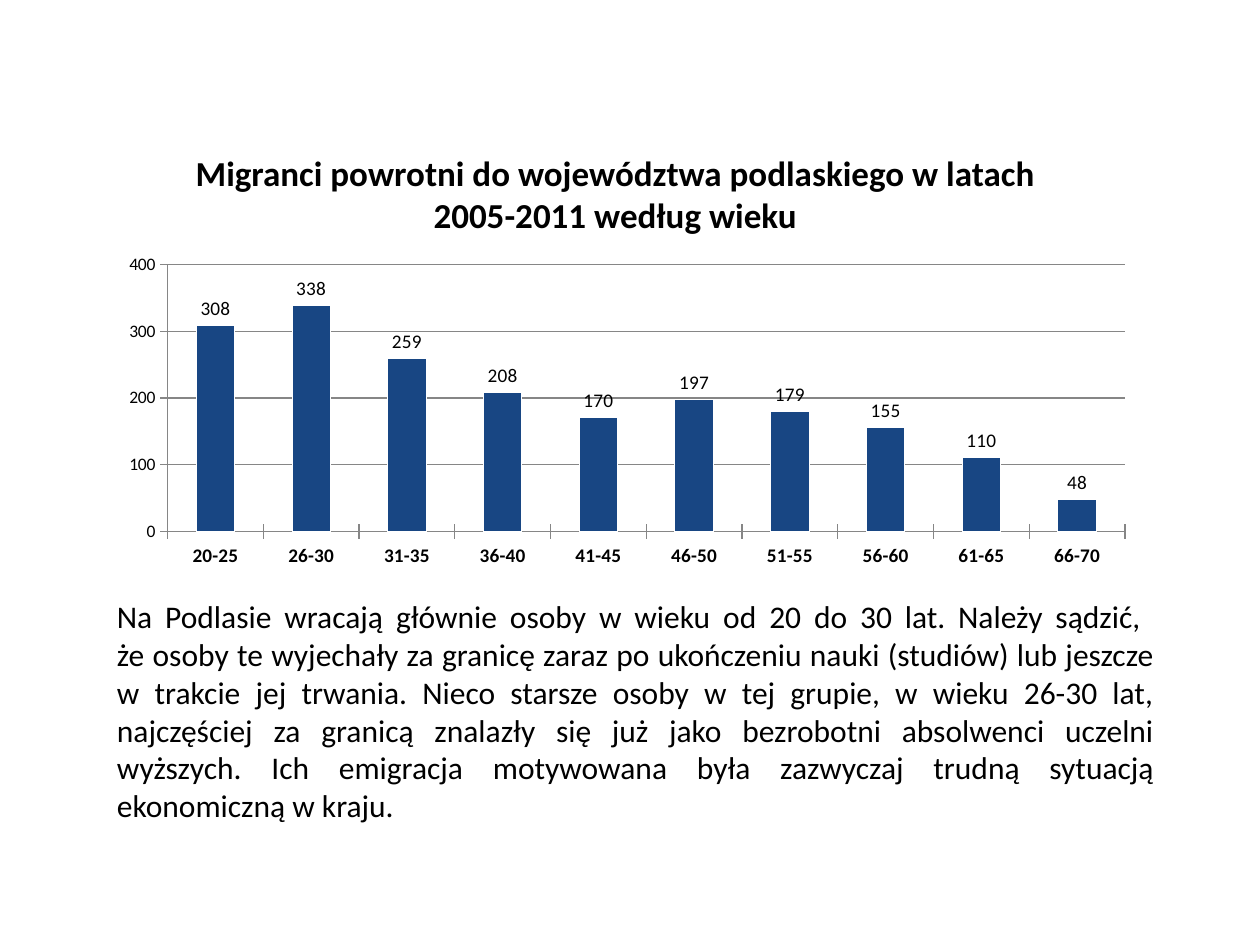
import pptx
import pptx.chart.data
import pptx.dml.color
import pptx.enum.chart
import pptx.enum.text
import pptx.oxml
import pptx.util
from pptx.util import Inches, Pt

FONT = "Calibri"
BLACK = pptx.dml.color.RGBColor(0x00, 0x00, 0x00)
WHITE = pptx.dml.color.RGBColor(0xFF, 0xFF, 0xFF)
NAVY = pptx.dml.color.RGBColor(0x18, 0x46, 0x83)
GRAY = pptx.dml.color.RGBColor(0x86, 0x86, 0x86)

TITLE = "Migranci powrotni do województwa podlaskiego w latach \n2005-2011 według wieku "
COMMENTARY = (
    "Na Podlasie wracają głównie osoby w wieku od 20 do 30 lat. Należy sądzić, \n"
    "że osoby te wyjechały za granicę zaraz po ukończeniu nauki (studiów) lub jeszcze "
    "w trakcie jej trwania. Nieco starsze osoby w tej grupie, w wieku 26-30 lat, "
    "najczęściej za granicą znalazły się już jako bezrobotni absolwenci uczelni "
    "wyższych. Ich emigracja motywowana była zazwyczaj trudną sytuacją "
    "ekonomiczną w kraju. "
)
MIGRANTS_BY_AGE = {
    "20-25": 308, "26-30": 338, "31-35": 259, "36-40": 208, "41-45": 170,
    "46-50": 197, "51-55": 179, "56-60": 155, "61-65": 110, "66-70": 48,
}
PLOT_LAYOUT = {"x": 0.06, "y": 0.03, "w": 0.91, "h": 0.79}


def set_font(font, size, bold=False):
    font.name = FONT
    font.size = Pt(size)
    font.bold = bold
    font.color.rgb = BLACK


def add_text(slide, text, box, size, alignment, bold=False):
    shape = slide.shapes.add_textbox(*map(Inches, box))
    frame = shape.text_frame
    frame.word_wrap = True
    frame.auto_size = pptx.enum.text.MSO_AUTO_SIZE.SHAPE_TO_FIT_TEXT
    paragraph = frame.paragraphs[0]
    paragraph.text = text
    paragraph.alignment = alignment
    set_font(paragraph.font, size, bold)


def set_plot_layout(chart, layout):
    plot_area = chart.plots[0]._element.getparent()
    for existing in plot_area.findall(pptx.oxml.ns.qn("c:layout")):
        plot_area.remove(existing)
    modes = '<c:layoutTarget val="inner"/><c:xMode val="edge"/><c:yMode val="edge"/>'
    sizes = "".join(f'<c:{name} val="{value}"/>' for name, value in layout.items())
    plot_area.insert(0, pptx.oxml.parse_xml(
        f'<c:layout {pptx.oxml.ns.nsdecls("c")}><c:manualLayout>'
        f"{modes}{sizes}</c:manualLayout></c:layout>"
    ))


def add_age_chart(slide, box):
    data = pptx.chart.data.CategoryChartData()
    data.categories = list(MIGRANTS_BY_AGE)
    data.add_series("Series 1", list(MIGRANTS_BY_AGE.values()))
    chart = slide.shapes.add_chart(
        pptx.enum.chart.XL_CHART_TYPE.COLUMN_CLUSTERED, *map(Inches, box), data
    ).chart
    chart.has_legend = False
    chart.has_title = False
    set_font(chart.font, 10)
    set_plot_layout(chart, PLOT_LAYOUT)

    plot = chart.plots[0]
    plot.vary_by_categories = False
    plot.gap_width = 150
    series = plot.series[0]
    series.format.fill.solid()
    series.format.fill.fore_color.rgb = NAVY
    series.format.line.color.rgb = WHITE
    labels = series.data_labels
    labels.show_value = True
    labels.position = pptx.enum.chart.XL_LABEL_POSITION.OUTSIDE_END
    set_font(labels.font, 11)

    value_axis = chart.value_axis
    value_axis.minimum_scale = 0
    value_axis.maximum_scale = 400
    value_axis.major_unit = 100
    value_axis.has_major_gridlines = True
    value_axis.major_gridlines.format.line.color.rgb = GRAY
    set_font(value_axis.tick_labels.font, 10)
    set_font(chart.category_axis.tick_labels.font, 11, bold=True)
    for axis in (chart.category_axis, value_axis):
        axis.major_tick_mark = pptx.enum.chart.XL_TICK_MARK.CROSS
        axis.format.line.color.rgb = GRAY


def main():
    presentation = pptx.Presentation()
    presentation.slide_width = Inches(10)
    presentation.slide_height = Inches(7.5)
    slide = presentation.slides.add_slide(presentation.slide_layouts[6])
    align = pptx.enum.text.PP_ALIGN
    add_age_chart(slide, (0.83, 2.02, 8.35, 2.68))
    add_text(slide, TITLE, (0.35, 1.15, 9.13, 0.77), 20, align.CENTER, bold=True)
    add_text(slide, COMMENTARY, (0.83, 4.69, 8.43, 1.92), 18, align.JUSTIFY)
    presentation.save("out.pptx")


if __name__ == "__main__":
    main()
